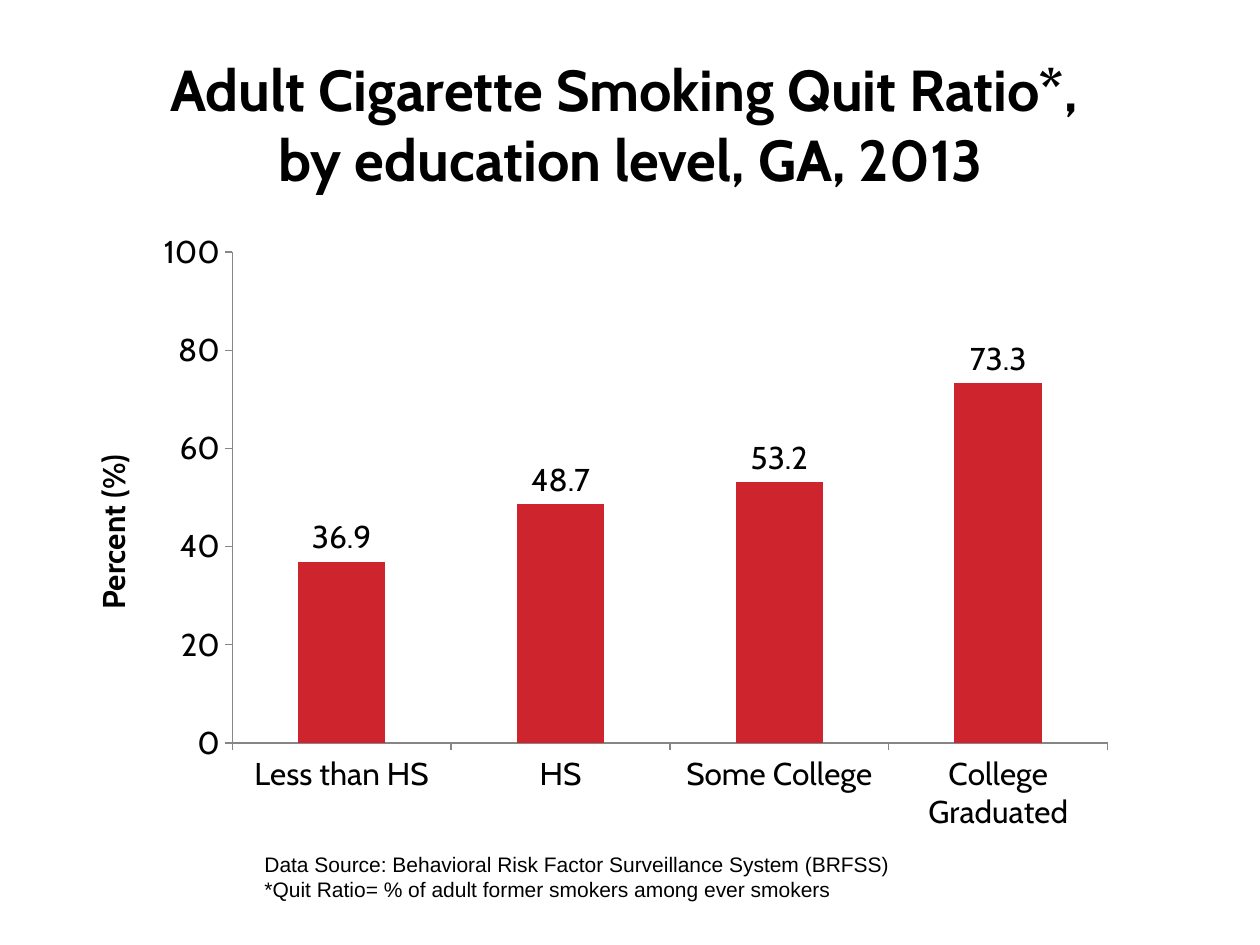
from pptx import Presentation
from pptx.chart.data import CategoryChartData
from pptx.dml.color import RGBColor
from pptx.enum.chart import XL_CHART_TYPE as ChartType
from pptx.enum.chart import XL_LABEL_POSITION as LabelPosition
from pptx.enum.chart import XL_TICK_MARK as TickMark
from pptx.enum.text import MSO_ANCHOR, PP_ALIGN
from pptx.util import Inches, Pt

BLACK = RGBColor(0x00, 0x00, 0x00)
RED = RGBColor(0xCE, 0x24, 0x2E)
AXIS_GRAY = RGBColor(0x86, 0x86, 0x86)

QUIT_RATIOS = {
    "Less than HS": 36.9,
    "HS": 48.7,
    "Some College": 53.2,
    "College Graduated": 73.3,
}
FOOTNOTES = [
    "Data Source: Behavioral Risk Factor Surveillance System (BRFSS)",
    "*Quit Ratio= % of adult former smokers among ever smokers",
]


def style_font(font, name, size, bold=False):
    font.name = name
    font.size = Pt(size)
    font.bold = bold
    font.color.rgb = BLACK


def set_title(slide):
    title = slide.shapes.title
    title.left, title.top = Inches(0.17), Inches(0.21)
    title.width, title.height = Inches(9.67), Inches(1.54)
    frame = title.text_frame
    frame.vertical_anchor = MSO_ANCHOR.MIDDLE
    # A vertical tab becomes a line break within the paragraph.
    frame.text = "Adult Cigarette Smoking Quit Ratio*, \vby education level, GA, 2013"
    para = frame.paragraphs[0]
    para.alignment = PP_ALIGN.CENTER
    for span in para.runs:
        style_font(span.font, "Cabin", 33, bold=True)


def style_axis(axis):
    axis.has_major_gridlines = False
    axis.major_tick_mark = TickMark.OUTSIDE
    axis.minor_tick_mark = TickMark.NONE
    axis.format.line.color.rgb = AXIS_GRAY
    axis.format.line.width = Pt(0.75)


def add_quit_ratio_chart(slide):
    data = CategoryChartData(number_format="General")
    data.categories = list(QUIT_RATIOS)
    data.add_series("Series 1", list(QUIT_RATIOS.values()))
    chart = slide.shapes.add_chart(
        ChartType.COLUMN_CLUSTERED,
        Inches(0.5), Inches(1.75), Inches(8.46), Inches(4.95), data,
    ).chart
    chart.has_legend = False
    chart.has_title = False
    style_font(chart.font, "Cabin", 18)

    style_axis(chart.category_axis)
    value_axis = chart.value_axis
    style_axis(value_axis)
    value_axis.minimum_scale = 0
    value_axis.maximum_scale = 100
    value_axis.major_unit = 20
    axis_title = value_axis.axis_title.text_frame
    axis_title.text = "Percent (%)"
    style_font(axis_title.paragraphs[0].runs[0].font, "Cabin", 18, bold=True)

    plot = chart.plots[0]
    plot.gap_width = 150
    plot.vary_by_categories = False
    bars = plot.series[0]
    bars.format.fill.solid()
    bars.format.fill.fore_color.rgb = RED
    labels = bars.data_labels
    labels.show_value = True
    labels.position = LabelPosition.OUTSIDE_END
    style_font(labels.font, "Cabin", 18)


def add_footnotes(slide):
    box = slide.shapes.add_textbox(
        Inches(2), Inches(6.71), Inches(5.42), Inches(0.71))
    frame = box.text_frame
    frame.word_wrap = True
    frame.text = "\n".join(FOOTNOTES)
    for para in frame.paragraphs:
        style_font(para.runs[0].font, "Arial", 12)


def main():
    deck = Presentation()
    deck.slide_width, deck.slide_height = Inches(10), Inches(7.5)
    title_only = deck.slide_layouts[5]
    slide = deck.slides.add_slide(title_only)
    set_title(slide)
    add_quit_ratio_chart(slide)
    add_footnotes(slide)
    deck.save("out.pptx")


if __name__ == "__main__":
    main()
